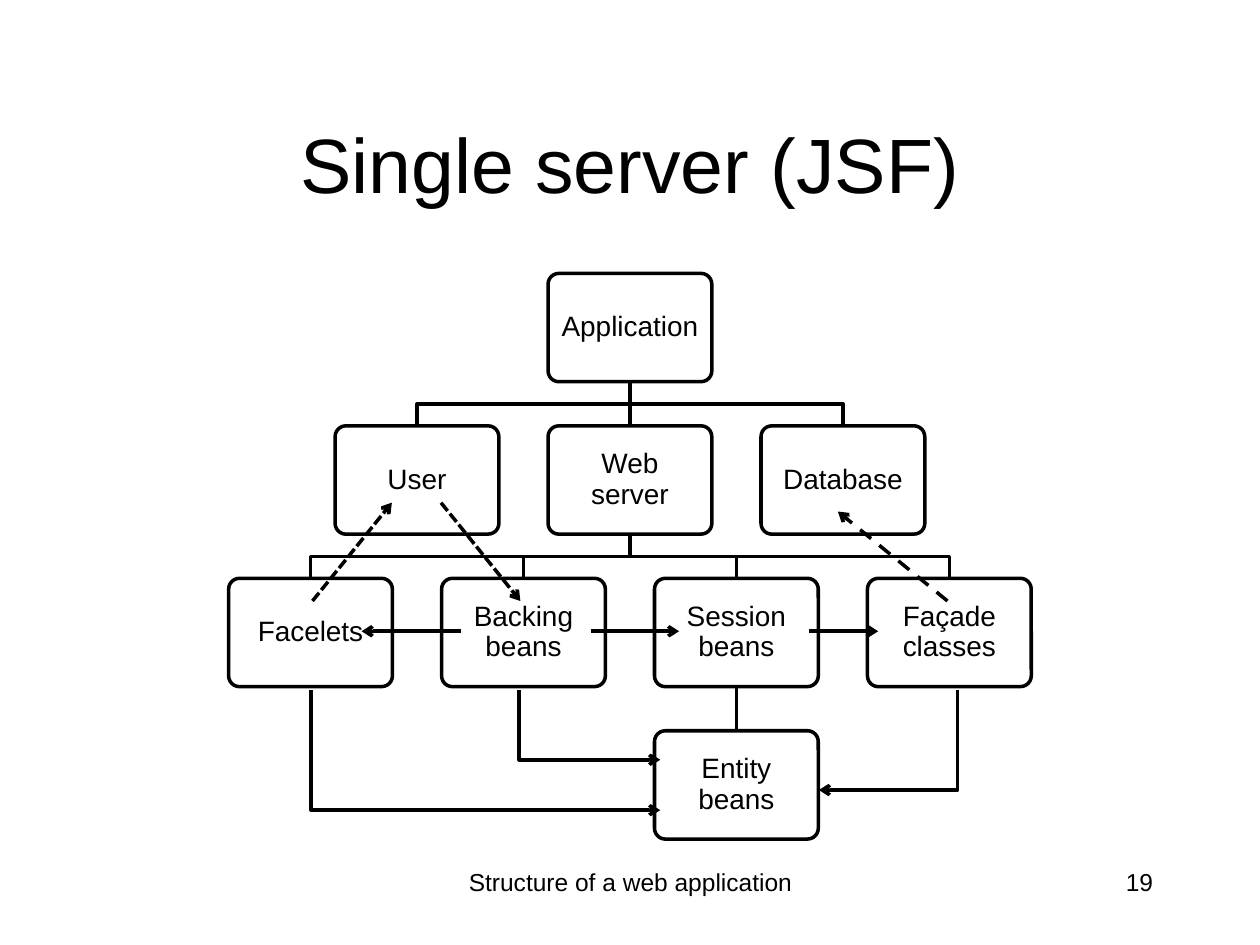
from lxml.etree import SubElement
from pptx import Presentation
from pptx.dml.color import RGBColor
from pptx.enum.dml import MSO_LINE
from pptx.enum.shapes import MSO_CONNECTOR, MSO_SHAPE
from pptx.enum.text import MSO_ANCHOR, PP_ALIGN
from pptx.oxml.ns import qn
from pptx.util import Inches, Pt

THEME = {
    "font": "Arial",
    "ink": RGBColor(0, 0, 0),
    "paper": RGBColor(255, 255, 255),
    "title": 44,
    "box": 16,
    "footer": 14,
    "line": 2,
}

TITLE = "Single server (JSF)"
FOOTERS = [
    ("Structure of a web application", 3.42, 3.17, PP_ALIGN.CENTER),
    ("19", 7.17, 2.08, PP_ALIGN.RIGHT),
]

BOXES = [
    ("Application", 0, 0),
    ("User", -1, 1),
    ("Web server", 0, 1),
    ("Database", 1, 1),
    ("Facelets", -1.5, 2),
    ("Backing beans", -0.5, 2),
    ("Session beans", 0.5, 2),
    ("Façade classes", 1.5, 2),
    ("Entity beans", 0.5, 3),
]
CHILDREN = {
    "Application": ["User", "Web server", "Database"],
    "Web server": ["Facelets", "Backing beans", "Session beans", "Façade classes"],
    "Session beans": ["Entity beans"],
}
STRAIGHT, ELBOW = MSO_CONNECTOR.STRAIGHT, MSO_CONNECTOR.ELBOW
ARROWS = [
    (ELBOW, (2.47, 5.48), (5.24, 6.43), None),
    (ELBOW, (4.12, 5.48), (5.24, 6.03), None),
    (ELBOW, (7.6, 5.48), (6.5, 6.27), None),
    (STRAIGHT, (7.52, 4.77), (6.65, 4.06), MSO_LINE.DASH),
    (STRAIGHT, (3.5, 3.99), (4.13, 4.77), MSO_LINE.SQUARE_DOT),
    (STRAIGHT, (2.48, 4.77), (3.11, 3.99), MSO_LINE.SQUARE_DOT),
    (STRAIGHT, (4.69, 5.01), (5.39, 5.01), None),
    (STRAIGHT, (3.66, 5.01), (2.87, 5.01), None),
    (STRAIGHT, (6.42, 5.01), (6.97, 5.01), None),
]

CENTER, TOP = 5, 2.17
BOX_WIDTH, BOX_HEIGHT = 1.3, 0.86
COLUMN_STEP, ROW_STEP = 1.69, 1.21


def write(shape, text, size, align=PP_ALIGN.CENTER, anchor=MSO_ANCHOR.MIDDLE,
          inset=None, spacing=None):
    frame = shape.text_frame
    frame.word_wrap = True
    frame.vertical_anchor = anchor
    if inset is not None:
        frame.margin_left = frame.margin_right = Inches(inset)
        frame.margin_top = frame.margin_bottom = Inches(inset)
    paragraph = frame.paragraphs[0]
    paragraph.alignment = align
    if spacing:
        paragraph.line_spacing = spacing
    run = paragraph.add_run()
    run.text = text
    run.font.name = THEME["font"]
    run.font.size = Pt(size)
    run.font.color.rgb = THEME["ink"]


def outline(shape):
    shape.line.color.rgb = THEME["ink"]
    shape.line.width = Pt(THEME["line"])


def add_box(slide, text, column, row):
    left = CENTER + column * COLUMN_STEP - BOX_WIDTH / 2
    shape = slide.shapes.add_shape(
        MSO_SHAPE.ROUNDED_RECTANGLE, Inches(left), Inches(TOP + row * ROW_STEP),
        Inches(BOX_WIDTH), Inches(BOX_HEIGHT))
    shape.adjustments[0] = 0.1
    shape.shadow.inherit = False
    shape.fill.solid()
    shape.fill.fore_color.rgb = THEME["paper"]
    outline(shape)
    write(shape, text, THEME["box"], inset=0.07, spacing=0.9)
    return shape


def add_connector(slide, kind, start, end):
    connector = slide.shapes.add_connector(kind, *map(Inches, start + end))
    outline(connector)
    SubElement(connector._element.spPr, qn("a:effectLst"))
    return connector


def add_branch(slide, parent, child):
    start_x, end_x = (box.left + box.width // 2 for box in (parent, child))
    start_y, end_y = parent.top + parent.height, child.top
    if start_x == end_x:
        connector = add_connector(slide, STRAIGHT, (0, 0), (0, 0))
        connector.begin_connect(parent, 2)
        connector.end_connect(child, 0)
        return
    middle = (start_y + end_y) // 2
    builder = slide.shapes.build_freeform(start_x, start_y)
    builder.add_line_segments(
        [(start_x, middle), (end_x, middle), (end_x, end_y)], close=False)
    branch = builder.convert_to_shape()
    branch.shadow.inherit = False
    branch.fill.background()
    outline(branch)


def add_arrow(slide, kind, start, end, dash):
    connector = add_connector(slide, kind, start, end)
    if dash:
        connector.line.dash_style = dash
    properties = connector._element.spPr
    SubElement(properties.find(qn("a:ln")), qn("a:tailEnd"), type="arrow")
    if kind == ELBOW:
        adjustments = properties.find(qn("a:prstGeom")).find(qn("a:avLst"))
        SubElement(adjustments, qn("a:gd"), name="adj1", fmla="val 0")


def main():
    presentation = Presentation()
    presentation.slide_width, presentation.slide_height = Inches(10), Inches(7.5)
    slide = presentation.slides.add_slide(presentation.slide_layouts[5])

    title = slide.shapes.title
    title.left, title.top = Inches(0.75), Inches(0.67)
    title.width, title.height = Inches(8.5), Inches(1.25)
    write(title, TITLE, THEME["title"])

    boxes = {text: add_box(slide, text, column, row) for text, column, row in BOXES}
    for parent, children in CHILDREN.items():
        for child in children:
            add_branch(slide, boxes[parent], boxes[child])

    for text, left, width, align in FOOTERS:
        footer = slide.shapes.add_textbox(
            Inches(left), Inches(6.83), Inches(width), Inches(0.5))
        write(footer, text, THEME["footer"], align=align, anchor=MSO_ANCHOR.TOP)

    for arrow in ARROWS:
        add_arrow(slide, *arrow)

    presentation.save("out.pptx")


if __name__ == "__main__":
    main()
